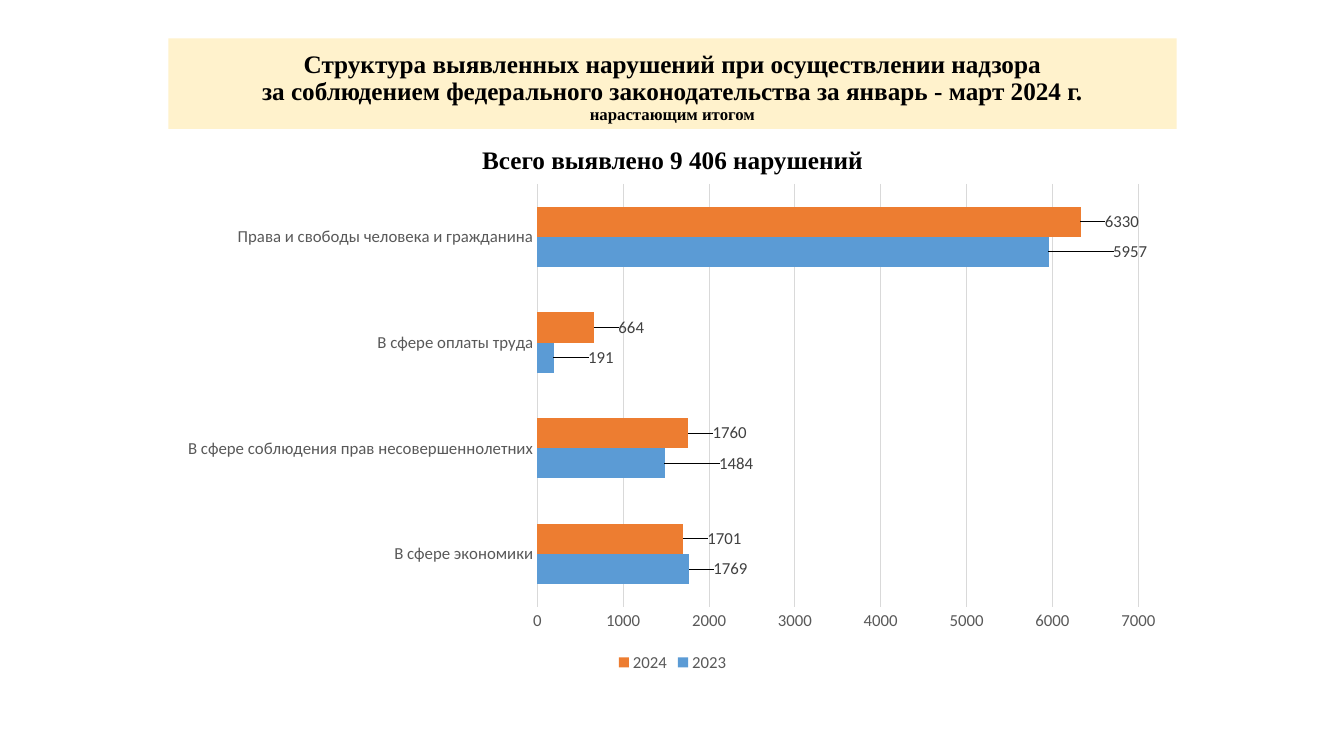
from lxml import etree
from pptx import Presentation
from pptx.chart.data import CategoryChartData
from pptx.dml.color import RGBColor
from pptx.enum.chart import XL_CHART_TYPE, XL_LABEL_POSITION, XL_LEGEND_POSITION, XL_TICK_MARK
from pptx.enum.shapes import MSO_SHAPE
from pptx.enum.text import MSO_ANCHOR, PP_ALIGN
from pptx.oxml.ns import qn
from pptx.util import Inches, Pt

BAR_CLUSTERED = XL_CHART_TYPE.BAR_CLUSTERED
OUTSIDE_END = XL_LABEL_POSITION.OUTSIDE_END
BOTTOM = XL_LEGEND_POSITION.BOTTOM
NO_TICK = XL_TICK_MARK.NONE
RECTANGLE = MSO_SHAPE.RECTANGLE
ANCHOR_TOP, ANCHOR_BOTTOM = MSO_ANCHOR.TOP, MSO_ANCHOR.BOTTOM
CENTER = PP_ALIGN.CENTER

COLORS = {"banner": "FFF2CC", "text": "000000", "axis": "595959",
          "label": "404040", "grid": "D9D9D9", "2023": "5B9BD5", "2024": "ED7D31"}
HEADING_FONT, CHART_FONT = "Times New Roman", "Calibri"
LEFT, WIDTH = 1.67, 10

CATEGORIES = ["В сфере экономики", "В сфере соблюдения прав несовершеннолетних",
              "В сфере оплаты труда", "Права и свободы человека и гражданина"]
VIOLATIONS = {"2023": [1769, 1484, 191, 5957], "2024": [1701, 1760, 664, 6330]}
# Shift of each value label to the right, as a share of the chart width
LABEL_SHIFTS = {"2023": [0.02, 0.05, 0.03, 0.06], "2024": [0.02, 0.02, 0.02, 0.02]}


def manual_layout(**settings):
    layout = etree.Element(qn("c:layout"))
    manual = etree.SubElement(layout, qn("c:manualLayout"))
    for name, value in settings.items():
        etree.SubElement(manual, qn(f"c:{name}")).set("val", str(value))
    return layout


class ReportSlide:
    def __init__(self, presentation):
        self.slide = presentation.slides.add_slide(presentation.slide_layouts[6])

    def color(self, name):
        return RGBColor.from_string(COLORS[name])

    def style(self, font, name, size, color):
        font.name, font.size = name, Pt(size)
        font.color.rgb = self.color(color)

    def heading(self, top, height, lines, spacing, anchor, fill=None):
        """Add a centred bold heading; lines holds (text, size) pairs."""
        shape = self.slide.shapes.add_shape(
            RECTANGLE, Inches(LEFT), Inches(top), Inches(WIDTH), Inches(height))
        shape.shadow.inherit = False
        shape.line.fill.background()
        if fill:
            shape.fill.solid()
            shape.fill.fore_color.rgb = self.color(fill)
        else:
            shape.fill.background()
        frame = shape.text_frame
        frame.word_wrap = True
        frame.vertical_anchor = anchor
        paragraph = frame.paragraphs[0]
        paragraph.alignment = CENTER
        paragraph.line_spacing = spacing
        for index, (text, size) in enumerate(lines):
            if index:
                paragraph.add_line_break()
            run = paragraph.add_run()
            run.text = text
            run.font.bold = True
            self.style(run.font, HEADING_FONT, size, "text")

    def bar_chart(self, top, height):
        data = CategoryChartData()
        data.categories = CATEGORIES
        for year, values in VIOLATIONS.items():
            data.add_series(year, values)
        chart = self.slide.shapes.add_chart(
            BAR_CLUSTERED, Inches(LEFT), Inches(top), Inches(WIDTH), Inches(height), data).chart
        self.style(chart.font, CHART_FONT, 10, "text")
        chart.has_title = False
        self.legend(chart)
        self.axes(chart)
        self.bars(chart)
        # Plot area
        plot_area = chart.element.find(f".//{qn('c:plotArea')}")
        for layout in plot_area.findall(qn("c:layout")):
            plot_area.remove(layout)
        plot_area.insert(0, manual_layout(
            layoutTarget="inner", xMode="edge", yMode="edge", x=0.366, y=0.021, w=0.596, h=0.841))

    def legend(self, chart):
        chart.has_legend = True
        chart.legend.position = BOTTOM
        chart.legend.include_in_layout = False
        self.style(chart.legend.font, CHART_FONT, 12, "axis")

    def axes(self, chart):
        for axis in (chart.category_axis, chart.value_axis):
            axis.major_tick_mark = axis.minor_tick_mark = NO_TICK
            axis.format.line.fill.background()
            self.style(axis.tick_labels.font, CHART_FONT, 12, "axis")
        chart.category_axis.has_major_gridlines = False
        value_axis = chart.value_axis
        value_axis.minimum_scale, value_axis.maximum_scale = 0, 7000
        value_axis.major_unit = 1000
        value_axis.has_major_gridlines = True
        grid_line = value_axis.major_gridlines.format.line
        grid_line.color.rgb = self.color("grid")
        grid_line.width = Pt(0.75)

    def bars(self, chart):
        plot = chart.plots[0]
        plot.gap_width, plot.overlap = 150, 0
        plot.vary_by_categories = False
        for series in plot.series:
            series.format.fill.solid()
            series.format.fill.fore_color.rgb = self.color(series.name)
            labels = series.data_labels
            labels.show_value = True
            labels.position = OUTSIDE_END
            self.style(labels.font, CHART_FONT, 12, "label")
            for index in range(len(CATEGORIES)):
                label = series.points[index].data_label
                label.position = OUTSIDE_END
                self.style(label.font, CHART_FONT, 12, "label")
        # Label shifts, in series and category order
        shifts = [shift for year in VIOLATIONS for shift in LABEL_SHIFTS[year]]
        for label, shift in zip(chart.element.iter(qn("c:dLbl")), shifts):
            label.find(qn("c:idx")).addnext(manual_layout(x=shift, y=0))


def main():
    presentation = Presentation()
    presentation.slide_width, presentation.slide_height = Inches(13.33), Inches(7.5)
    report = ReportSlide(presentation)

    # Title banner
    report.heading(0.38, 0.9, [
        ("Структура выявленных нарушений при осуществлении надзора", 18),
        ("за соблюдением федерального законодательства за январь - март 2024 г.", 18),
        ("нарастающим итогом", 12)], 0.9, ANCHOR_BOTTOM, "banner")
    # Total
    report.heading(1.44, 0.36, [("Всего выявлено 9 406 нарушений", 18)], 0.8, ANCHOR_TOP)
    # Violations by area and year
    report.bar_chart(1.72, 4.99)

    presentation.save("out.pptx")


if __name__ == "__main__":
    main()
